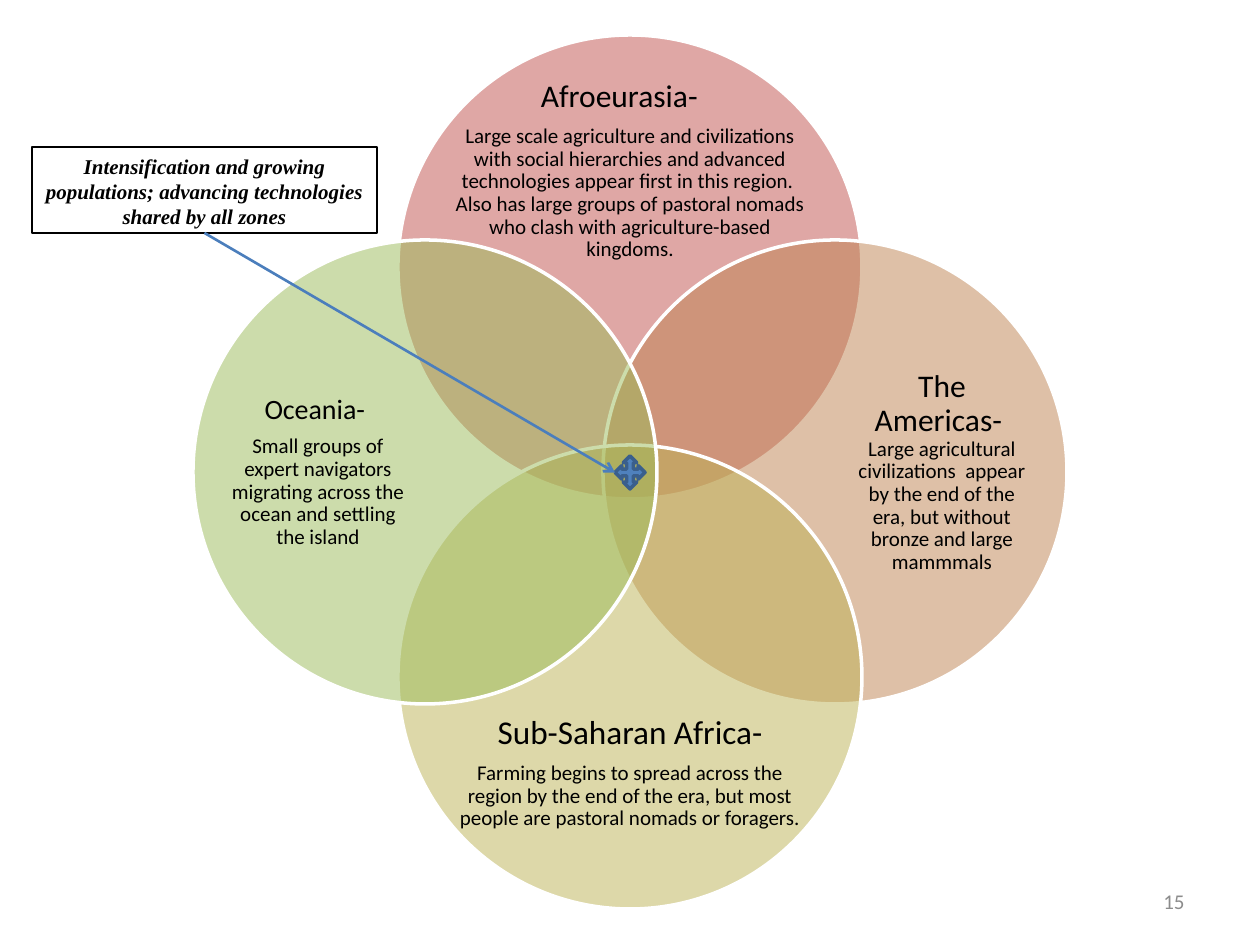
from dataclasses import dataclass
from lxml.etree import SubElement
from pptx import Presentation
from pptx.dml.color import RGBColor
from pptx.enum.shapes import MSO_CONNECTOR, MSO_SHAPE
from pptx.enum.text import MSO_ANCHOR, MSO_AUTO_SIZE, PP_ALIGN
from pptx.oxml.ns import qn
from pptx.util import Emu, Pt


@dataclass(frozen=True)
class Theme:
    ink: str = "000000"
    paper: str = "FFFFFF"
    gray: str = "8C8C8C"
    arrow: str = "4B7EBC"
    mark: str = "4F81BD"
    edge: str = "3A5F8C"
    font: str = "Calibri"
    serif: str = "Times New Roman"
    body: int = 12


@dataclass(frozen=True)
class Zone:
    dx: int  # direction from the hub
    dy: int
    color: str
    size: int
    title: str
    note: str
    joined: bool = False  # title and note share one paragraph


THEME = Theme()
HUB_X, HUB_Y = 630, 472
RADIUS, REACH = 232, 205
LONG = 357  # longer side of a zone's text box

ZONES = [
    Zone(0, -1, "C0504D", 18, "Afroeurasia-   ",
         "Large scale agriculture and civilizations with social hierarchies "
         "and advanced technologies appear first in this region.  Also has "
         "large groups of pastoral nomads who clash with agriculture-based "
         "kingdoms."),
    Zone(1, 0, "BE8351", 18, "The Americas-  ",
         "Large agricultural civilizations  appear by the end of the era, "
         "but without bronze and large mammmals", joined=True),
    Zone(0, 1, "BDB255", 19, "Sub-Saharan Africa-",
         "Farming begins to spread across the region by the end of the era, "
         "but most people are pastoral nomads or foragers."),
    Zone(-1, 0, "9BBB59", 16, "Oceania- ",
         "Small groups of expert navigators migrating across the ocean and "
         "settling the island"),
]


def px(n: float) -> Emu:
    return Emu(round(n * 914400 / 126))


def rgb(code: str) -> RGBColor:
    return RGBColor.from_string(code)


def write(para, text: str, *, size: int = THEME.body, font: str = THEME.font,
          color: str = THEME.ink, bold: bool = False, slant: bool = False,
          align=PP_ALIGN.CENTER) -> None:
    para.alignment = align
    run = para.add_run()
    run.text = text
    face = run.font
    face.size, face.name = Pt(size), font
    face.bold, face.italic = bold, slant
    face.color.rgb = rgb(color)


def add_box(slide, x: float, y: float, w: int, h: int):
    frame = slide.shapes.add_textbox(px(x), px(y), px(w), px(h)).text_frame
    frame.word_wrap = True
    frame.vertical_anchor = MSO_ANCHOR.MIDDLE
    return frame


def add_form(slide, kind, x: int, y: int, w: int, h: int,
             fill: str, line: str, width: float):
    form = slide.shapes.add_shape(kind, px(x), px(y), px(w), px(h))
    form.shadow.inherit = False
    form.fill.solid()
    form.fill.fore_color.rgb = rgb(fill)
    form.line.color.rgb = rgb(line)
    form.line.width = Pt(width)
    return form


def add_zone(slide, zone: Zone) -> None:
    # Half-transparent circle
    x, y = HUB_X + zone.dx * REACH, HUB_Y + zone.dy * REACH
    disk = add_form(slide, MSO_SHAPE.OVAL, x - RADIUS, y - RADIUS,
                    2 * RADIUS, 2 * RADIUS, zone.color, THEME.paper, 2)
    tint = disk.fill._xPr.find(".//" + qn("a:srgbClr"))
    SubElement(tint, qn("a:alpha"), val="50000")

    # Text in the outer part of the circle
    w, h = (179, LONG) if zone.dx else (LONG, 147)
    x, y = HUB_X + zone.dx * 312, HUB_Y + zone.dy * 301
    frame = add_box(slide, x - w / 2, y - h / 2, w, h)
    frame.margin_left = frame.margin_right = 0
    frame.margin_top = frame.margin_bottom = 0
    head = frame.paragraphs[0]
    write(head, zone.title, size=zone.size)
    write(head if zone.joined else frame.add_paragraph(), zone.note)
    for para in frame.paragraphs:
        para.line_spacing = 0.9
        para.space_after = Pt(6)


def add_arrow(slide, start, end) -> None:
    link = slide.shapes.add_connector(MSO_CONNECTOR.STRAIGHT, 0, 0, 0, 0)
    link.begin_connect(start, 2)
    link.end_connect(end, 1)
    link.line.color.rgb = rgb(THEME.arrow)
    link.line.width = Pt(1.5)
    SubElement(link.line._get_or_add_ln(), qn("a:tailEnd"), type="arrow")
    SubElement(link._element.spPr, qn("a:effectLst"))


def main() -> None:
    deck = Presentation()
    deck.slide_width, deck.slide_height = px(1260), px(945)
    slide = deck.slides.add_slide(deck.slide_layouts[6])

    # Page number
    page = add_box(slide, 903, 876, 294, 50)
    write(page.paragraphs[0], "15", color=THEME.gray, align=PP_ALIGN.RIGHT)

    # Four overlapping world zones
    for zone in ZONES:
        add_zone(slide, zone)

    # Callout on what all zones share
    call = add_form(slide, MSO_SHAPE.RECTANGLE, 32, 147, 345, 86,
                    THEME.paper, THEME.ink, 0.75)
    frame = call.text_frame
    frame.word_wrap = True
    frame.auto_size = MSO_AUTO_SIZE.SHAPE_TO_FIT_TEXT
    frame.vertical_anchor = MSO_ANCHOR.TOP
    write(frame.paragraphs[0],
          "Intensification and growing populations; advancing technologies "
          "shared by all zones", font=THEME.serif, bold=True, slant=True)

    # Marker at the hub, with the arrow that leads to it
    mark = add_form(slide, MSO_SHAPE.QUAD_ARROW, 615, 456, 30, 33,
                    THEME.mark, THEME.edge, 2)
    add_arrow(slide, call, mark)

    deck.save("out.pptx")


if __name__ == "__main__":
    main()
